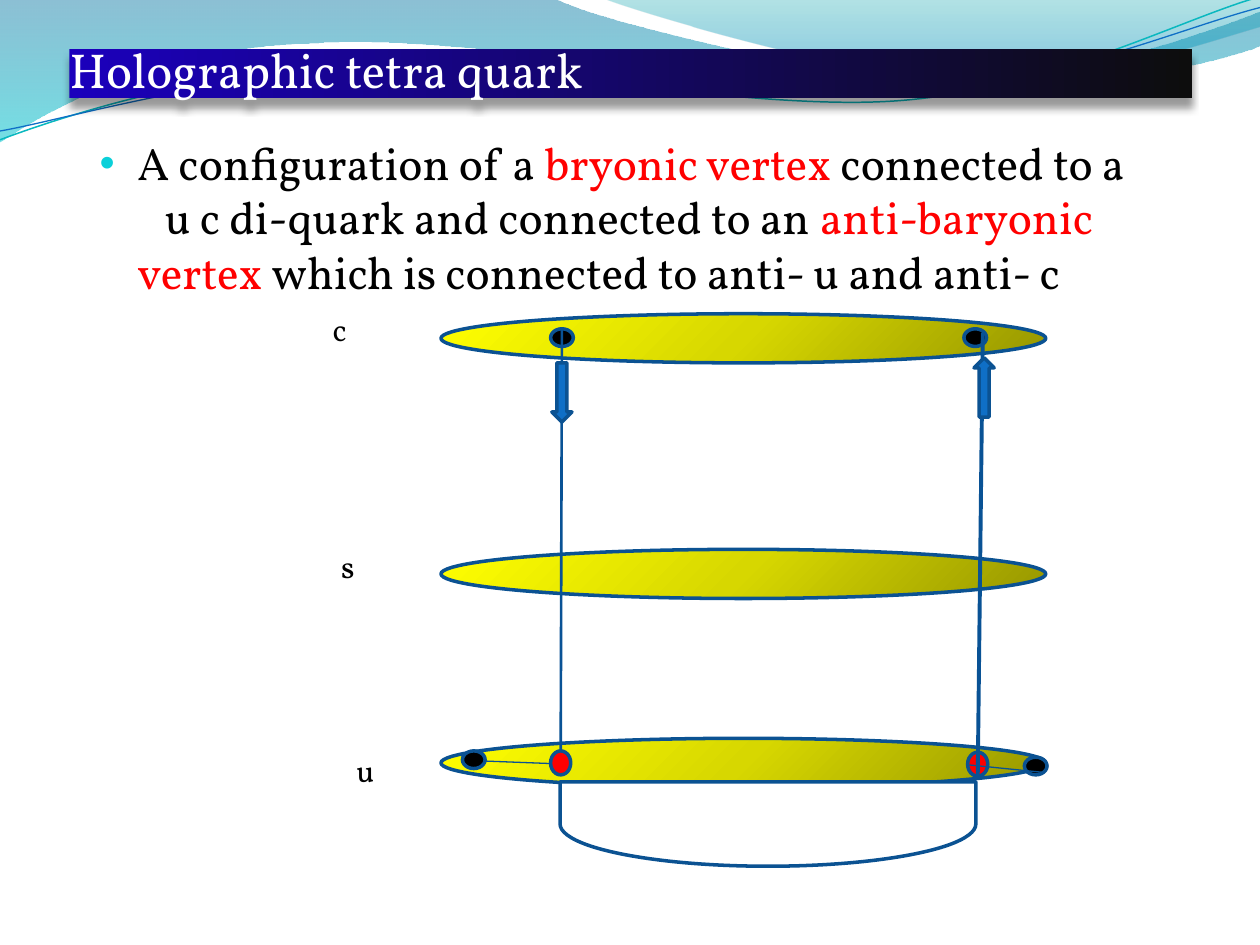
import pptx
import pptx.util
import pptx.dml.color
import pptx.enum.shapes
import pptx.enum.text
import pptx.oxml
import pptx.oxml.ns
import lxml.etree

theme = {
    "font": "Vollkorn", "title": 28, "body": 26, "label": 18,
    "white": "FFFFFF", "black": "000000", "red": "FF0000", "bullet": "0BD0D9",
    "outline": "0B5292", "string": "095295", "arrow": "0F6FC6",
    "banner": [(0, "1B00BC", 100), (100, "0D0D0D", 100)],
    "brane": [(0, "979700", 100), (50, "D7D700", 100), (100, "FFFF00", 100)],
    "wave": [(0, "0074A1", 45), (100, "00C6CF", 55)],
    "crest": [(0, "00A1A9", 30), (80, "008BBF", 45)],
    "ripple": "0AB8BF",
}
rgb = pptx.dml.color.RGBColor.from_string
kinds = pptx.enum.shapes.MSO_SHAPE
drawing = pptx.oxml.ns.nsdecls("a")

deck = pptx.Presentation()
deck.slide_width = pptx.util.Inches(10)
deck.slide_height = pptx.util.Inches(7.5)
column = deck.slide_width / 10
row = deck.slide_height / 7.5
page = deck.slides.add_slide(deck.slide_layouts[1])


def paint(shape, fill, angle=0, line=None, width=2):
    if fill is None:
        shape.fill.background()
    elif isinstance(fill, str):
        shape.fill.solid()
        shape.fill.fore_color.rgb = rgb(fill)
    else:
        shape.fill.background()
        stops = "".join(
            f'<a:gs pos="{spot * 1000}"><a:srgbClr val="{color}">'
            f'<a:alpha val="{alpha * 1000}"/></a:srgbClr></a:gs>'
            for spot, color, alpha in fill)
        blank = shape._element.spPr.find(pptx.oxml.ns.qn("a:noFill"))
        blank.getparent().replace(blank, pptx.oxml.parse_xml(
            f'<a:gradFill {drawing} rotWithShape="1"><a:gsLst>{stops}</a:gsLst>'
            f'<a:lin ang="{angle * 60000}" scaled="0"/></a:gradFill>'))
    if line:
        shape.line.color.rgb = rgb(line)
        shape.line.width = pptx.util.Pt(width)
    else:
        shape.line.fill.background()
    shape.shadow.inherit = False


def place(kind, left, top, width, height, fill, angle=0):
    shape = page.shapes.add_shape(
        kind, round(left * column), round(top * row), round(width * column), round(height * row))
    paint(shape, fill, angle, theme["outline"])
    return shape


waves = [
    ([(0, 0), (4.4, -0.01), (4.76, 0.17, 6.64, 0.63, 7.58, 0.63),
      (8.53, 0.63, 9.58, 0.26, 10, 0.09), (10.01, 0.36),
      (9.83, 0.44, 8.7, 0.76, 7.46, 0.75), (6.22, 0.75, 3.82, 0.28, 2.57, 0.34),
      (1.29, 0.36, 0.46, 0.83, -0.01, 1.13)], theme["wave"], None, 0),
    ([(4.79, -0.01), (5.09, 0.11, 6.82, 0.62, 7.69, 0.65),
      (8.56, 0.69, 9.61, 0.32, 10, 0.21), (10, 0)], theme["crest"], None, 0),
    ([(0, 1.11), (0.48, 0.93, 1.58, 0.57, 2.77, 0.52),
      (3.95, 0.47, 5.93, 0.89, 7.13, 0.8), (8.33, 0.71, 9.38, 0.15, 9.98, -0.02)],
     None, theme["ripple"], 0.85),
    ([(0, 1.04), (0.47, 0.96, 1.64, 0.61, 2.83, 0.56),
      (4.03, 0.51, 5.97, 0.84, 7.17, 0.75), (8.36, 0.67, 9.41, 0.21, 10, 0.06)],
     None, theme["arrow"], 0.75),
]
for steps, fill, line, width in waves:
    corners = [(step[-2] * column, step[-1] * row) for step in steps]
    builder = page.shapes.build_freeform(*corners[0])
    builder.add_line_segments(corners[1:], close=fill is not None)
    wave = builder.convert_to_shape()
    segments = list(wave._element.iter(pptx.oxml.ns.qn("a:lnTo")))
    for segment, step in zip(segments, steps[1:]):
        if len(step) == 6:
            knots = "".join(
                f'<a:pt x="{round(x * column) - wave.left}" y="{round(y * row) - wave.top}"/>'
                for x, y in zip(step[::2], step[1::2]))
            segment.getparent().replace(segment, pptx.oxml.parse_xml(
                f'<a:cubicBezTo {drawing}>{knots}</a:cubicBezTo>'))
    paint(wave, fill, 90, line, width)

title, body = page.placeholders
for box, left, top, width, height in (
        (title, 0.55, 0.39, 8.91, 0.39), (body, 0.69, 1.02, 8.61, 6.33)):
    box.left, box.width = round(left * column), round(width * column)
    box.top, box.height = round(top * row), round(height * row)
    box.text_frame.auto_size = pptx.enum.text.MSO_AUTO_SIZE.NONE
    box._element.getparent().append(box._element)

paint(title, theme["banner"])
effects = title._element.spPr.find(pptx.oxml.ns.qn("a:effectLst"))
effects.append(pptx.oxml.parse_xml(
    f'<a:outerShdw {drawing} blurRad="50800" dist="63500" dir="5400000" rotWithShape="0">'
    '<a:srgbClr val="000000"><a:alpha val="40000"/></a:srgbClr></a:outerShdw>'))
frame = title.text_frame
frame.margin_left = frame.margin_right = frame.margin_bottom = 0
frame.margin_top = round(0.05 * row)
frame.vertical_anchor = pptx.enum.text.MSO_ANCHOR.BOTTOM
frame.text = "Holographic tetra quark"
para = frame.paragraphs[0]
para.alignment = pptx.enum.text.PP_ALIGN.LEFT
para.font.name = theme["font"]
para.font.size = pptx.util.Pt(theme["title"])
para.font.color.rgb = rgb(theme["white"])

para = body.text_frame.paragraphs[0]
para.space_before = 0
layout = para._p.get_or_add_pPr()
layout.set("marL", str(round(0.3 * column)))
layout.set("indent", str(round(-0.3 * column)))
for markup in (f'<a:buClr {drawing}><a:srgbClr val="{theme["bullet"]}"/></a:buClr>',
               f'<a:buSzPct {drawing} val="95000"/>',
               f'<a:buFont {drawing} typeface="Arial"/>',
               f'<a:buChar {drawing} char="•"/>',
               f'<a:tabLst {drawing}><a:tab pos="{round(0.52 * column)}" algn="l"/></a:tabLst>'):
    layout.append(pptx.oxml.parse_xml(markup))
para.font.name = theme["font"]
para.font.size = pptx.util.Pt(theme["body"])
for words, color in (
        ("A configuration of a ", "black"), ("bryonic vertex ", "red"),
        ("connected to a\v\tu c di-quark and connected to an ", "black"),
        ("anti-baryonic vertex ", "red"),
        ("which is connected to anti- u and anti- c", "black")):
    for index, words_on_line in enumerate(words.split("\v")):
        if index:
            para.add_line_break()
        span = para.add_run()
        span.text = words_on_line
        span.font.color.rgb = rgb(theme[color])

for top in (2.49, 4.36, 5.86):
    place(kinds.OVAL, 3.5, top, 4.8, 0.39, theme["brane"], 225)
for left, top in ((7.68, 5.97), (4.37, 5.96)):
    place(kinds.OVAL, left, top, 0.16, 0.19, theme["red"])
for left, top in ((8.13, 6.01), (7.65, 2.61), (4.37, 2.61), (3.67, 5.96)):
    place(kinds.OVAL, left, top, 0.18, 0.14, theme["black"])

for x1, y1, x2, y2, width in (
        (4.46, 2.61, 4.45, 5.96, 1.5), (7.8, 2.64, 7.76, 6.16, 2.25),
        (4.37, 6.06, 3.84, 6.04, 0.75), (7.68, 6.07, 8.28, 6.13, 0.75)):
    string = page.shapes.add_connector(
        pptx.enum.shapes.MSO_CONNECTOR.STRAIGHT,
        round(x1 * column), round(y1 * row), round(x2 * column), round(y2 * row))
    string.line.color.rgb = rgb(theme["string"])
    string.line.width = pptx.util.Pt(width)
    lxml.etree.SubElement(string._element.spPr, pptx.oxml.ns.qn("a:effectLst"))

place(kinds.FLOWCHART_DELAY, 5.76, 4.89, 0.67, 3.3, theme["white"]).rotation = 90

for flavour, left, top, width in (("c", 2.53, 2.41, 0.32), ("u", 2.72, 5.91, 0.35),
                                  ("s", 2.61, 4.29, 0.3)):
    label = page.shapes.add_textbox(
        round(left * column), round(top * row), round(width * column), round(0.4 * row))
    label.text_frame.word_wrap = False
    label.text_frame.auto_size = pptx.enum.text.MSO_AUTO_SIZE.SHAPE_TO_FIT_TEXT
    label.text_frame.text = flavour
    para = label.text_frame.paragraphs[0]
    para.alignment = pptx.enum.text.PP_ALIGN.RIGHT
    para.font.name = theme["font"]
    para.font.size = pptx.util.Pt(theme["label"])
    para.font.color.rgb = rgb(theme["black"])

place(kinds.DOWN_ARROW, 7.73, 2.84, 0.16, 0.47, theme["arrow"]).rotation = 180
place(kinds.DOWN_ARROW, 4.38, 2.88, 0.16, 0.47, theme["arrow"])

deck.save("out.pptx")
